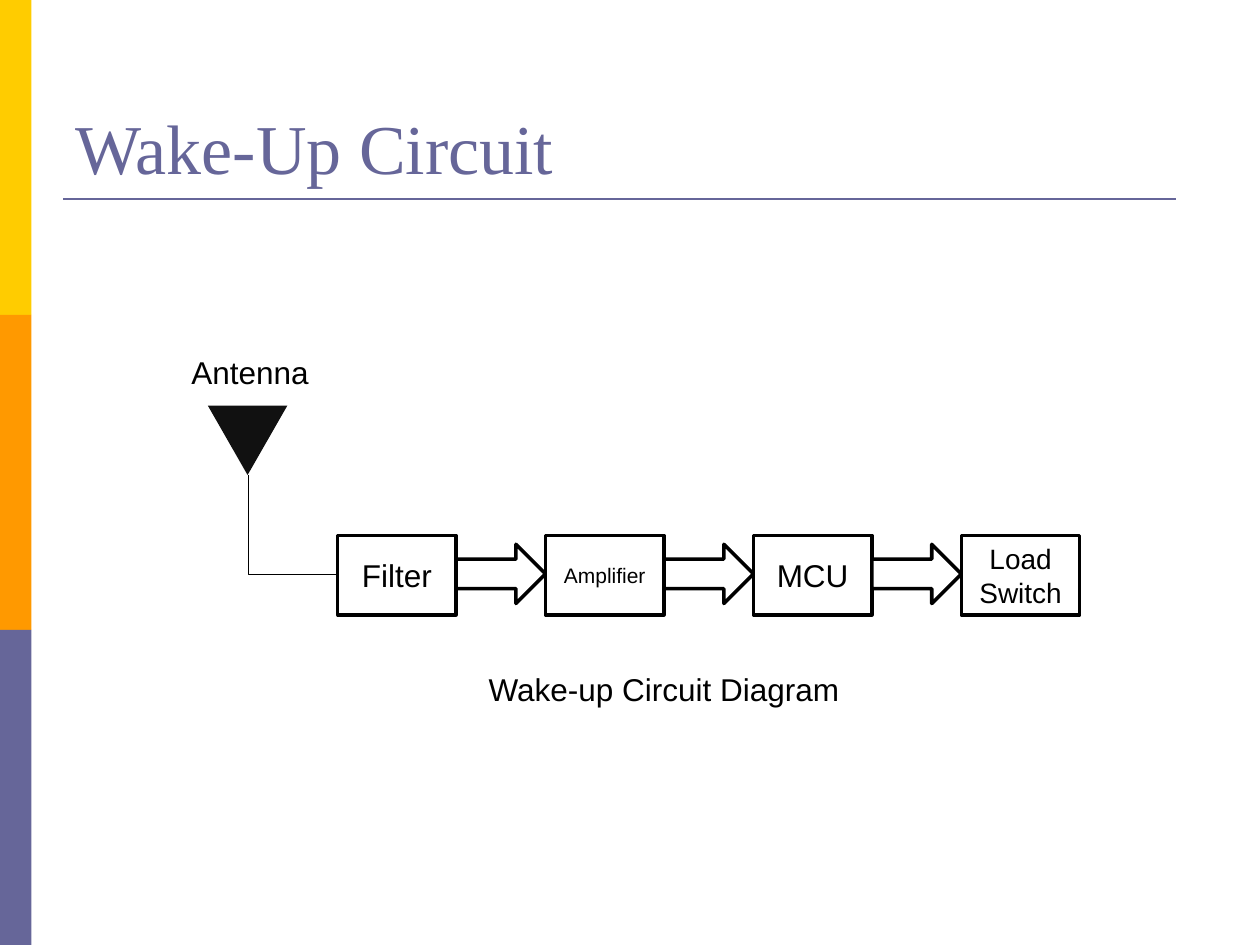
from lxml import etree
from pptx import Presentation
from pptx.dml.color import RGBColor
from pptx.enum import shapes, text
from pptx.oxml.ns import qn
from pptx.util import Inches, Pt

COLORS = {
    "yellow": "FFCC00",
    "orange": "FF9900",
    "purple": "666699",
    "antenna": "111111",
    "black": "000000",
    "white": "FFFFFF",
}


def rgb(name):
    return RGBColor.from_string(COLORS[name])


def write(tf, content, size=18, font="Arial", color="black", align=None):
    p = tf.paragraphs[0]
    p.alignment = align
    r = p.add_run()
    r.text = content
    r.font.size = Pt(size)
    r.font.name = font
    r.font.color.rgb = rgb(color)


class Deck:
    """Holds the presentation style and the current slide."""

    def __init__(self, prs):
        self.s = prs.slides.add_slide(prs.slide_layouts[5])

    def title(self, content, *box):
        sp = self.s.shapes.title
        sp.left, sp.top, sp.width, sp.height = map(Inches, box)
        tf = sp.text_frame
        tf.auto_size = text.MSO_AUTO_SIZE.NONE
        tf.vertical_anchor = text.MSO_ANCHOR.BOTTOM
        write(tf, content, size=40, font="Times New Roman", color="purple",
              align=text.PP_ALIGN.LEFT)

    def shape(self, kind, *box, fill="white", line=None):
        sp = self.s.shapes.add_shape(kind, *map(Inches, box))
        sp.shadow.inherit = False
        sp.fill.solid()
        sp.fill.fore_color.rgb = rgb(fill)
        if line:
            sp.line.color.rgb = rgb(line)
            sp.line.width = Pt(2)
        else:
            sp.line.fill.background()
        return sp

    def block(self, content, *box, size=18):
        sp = self.shape(shapes.MSO_SHAPE.RECTANGLE, *box, line="black")
        tf = sp.text_frame
        tf.word_wrap = True
        tf.vertical_anchor = text.MSO_ANCHOR.MIDDLE
        write(tf, content, size=size, align=text.PP_ALIGN.CENTER)

    def line(self, kind, *ends, color="black", width=0.75):
        cn = self.s.shapes.add_connector(kind, *map(Inches, ends))
        cn.line.color.rgb = rgb(color)
        cn.line.width = Pt(width)
        etree.SubElement(cn._element.spPr, qn("a:effectLst"))
        return cn

    def corner(self, *ends):
        """Draw a one-bend connector that runs down, then right."""
        cn = self.line(shapes.MSO_CONNECTOR.ELBOW, *ends)
        spPr = cn._element.spPr
        spPr.find(qn("a:prstGeom")).set("prst", "bentConnector2")
        spPr.find(qn("a:xfrm")).set("rot", str(270 * 60000))

    def label(self, content, *box):
        tf = self.s.shapes.add_textbox(*map(Inches, box)).text_frame
        tf.word_wrap = False
        tf.auto_size = text.MSO_AUTO_SIZE.SHAPE_TO_FIT_TEXT
        write(tf, content)


def main():
    prs = Presentation()
    prs.slide_width, prs.slide_height = Inches(10), Inches(7.5)
    deck = Deck(prs)

    # Side bars, title and rule
    for i, color in enumerate(("yellow", "orange", "purple")):
        deck.shape(shapes.MSO_SHAPE.RECTANGLE, 0, 2.5 * i, 0.25, 2.5, fill=color)
    deck.title("Wake-Up Circuit", 0.5, 0.3, 9, 1.25)
    deck.line(shapes.MSO_CONNECTOR.STRAIGHT, 0.5, 1.58, 9.33, 1.58,
              color="purple", width=1.5)

    # Antenna and its lead to the filter
    deck.label("Antenna", 1.42, 2.75, 1.14, 0.4)
    antenna = deck.shape(shapes.MSO_SHAPE.ISOSCELES_TRIANGLE,
                         1.65, 3.22, 0.63, 0.55, fill="antenna")
    antenna.rotation = 180
    deck.corner(2.72, 3.81, 1.93, 4.52)

    # Chain of stages joined by block arrows
    stages = [("Filter", 18), ("Amplifier", 12), ("MCU", 18), ("Load Switch", 16)]
    left, stage_w, arrow_w = 2.68, 0.94, 0.71
    pitch = stage_w + arrow_w
    for i, (name, size) in enumerate(stages):
        x = left + i * pitch
        deck.block(name, x, 4.25, stage_w, 0.63, size=size)
        if i < len(stages) - 1:
            deck.shape(shapes.MSO_SHAPE.RIGHT_ARROW, x + stage_w, 4.32,
                       arrow_w, 0.47, line="black")

    # Caption
    deck.label("Wake-up Circuit Diagram", 3.78, 5.27, 3.01, 0.4)

    prs.save("out.pptx")


if __name__ == "__main__":
    main()
